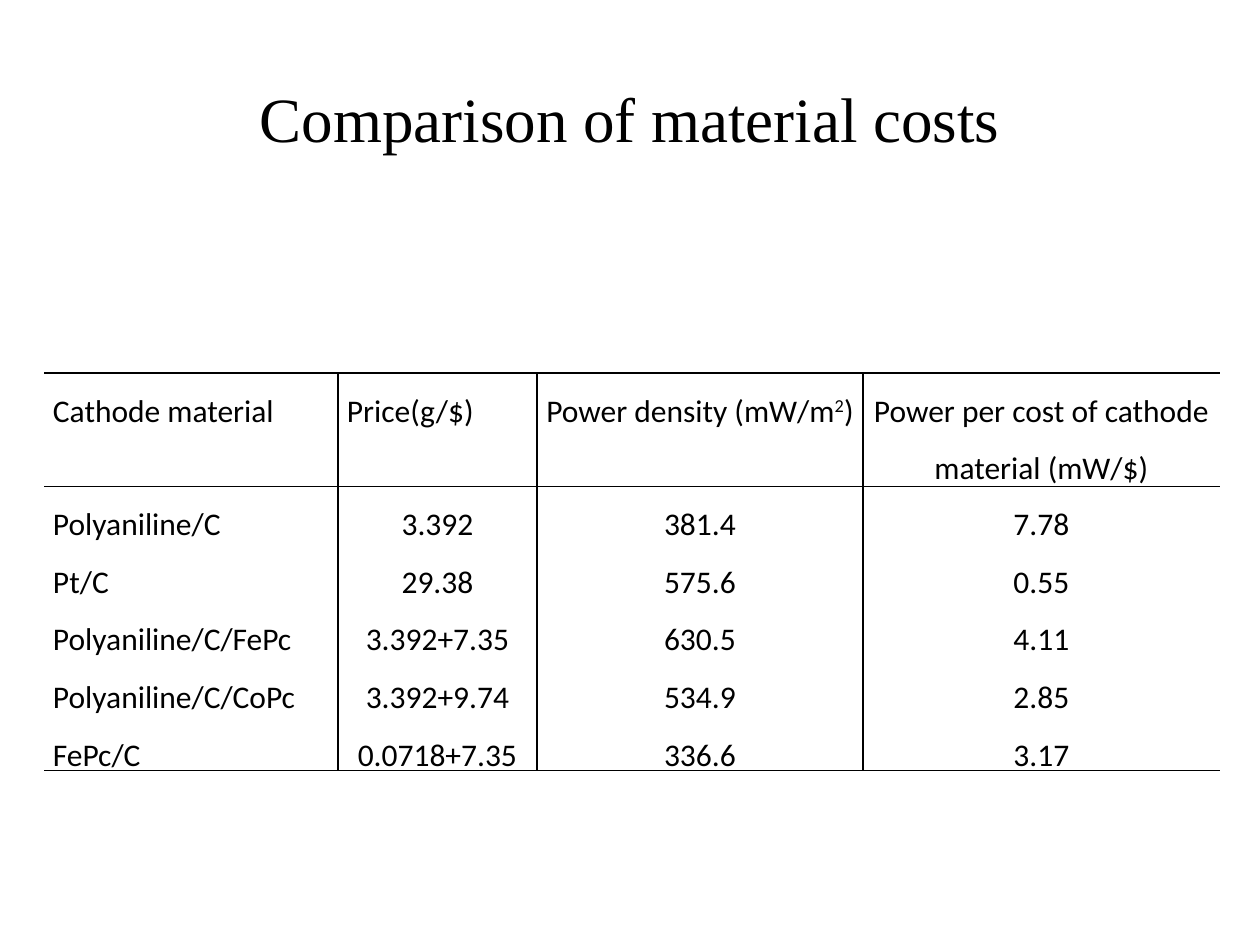
import pptx
import pptx.dml.color
import pptx.enum.text
import pptx.oxml
import pptx.oxml.ns
import pptx.util

PX = 914400 // 126
COLORS = {"ink": "000000", "page": "FFFFFF"}
ALIGN = pptx.enum.text.PP_ALIGN
COLUMN_WIDTHS = [294, 199, 326, 357]
ROW_HEIGHTS = [113, 284]
HEADERS = [
    "Cathode material",
    "Price(g/$)",
    "Power density (mW/m^2^)",
    "Power per cost of cathode material (mW/$)",
]
MATERIALS = [
    ("Polyaniline/C", "3.392", "381.4", "7.78"),
    ("Pt/C", "29.38", "575.6", "0.55"),
    ("Polyaniline/C/FePc", "3.392+7.35", "630.5", "4.11"),
    ("Polyaniline/C/CoPc", "3.392+9.74", "534.9", "2.85"),
    ("FePc/C", "0.0718+7.35", "336.6", "3.17"),
]


def px(n):
    """Turn pixels into EMU."""
    return pptx.util.Emu(n * PX)


def rgb(name):
    """Look up a named colour."""
    return pptx.dml.color.RGBColor.from_string(COLORS[name])


def write(p, text, font, size, align):
    """Fill a paragraph, raising the parts between carets."""
    for i, part in enumerate(text.split("^")):
        r = p.add_run()
        r.text = part
        if i % 2:
            r._r.get_or_add_rPr().set("baseline", "30000")
    p.alignment = align
    p.font.name = font
    p.font.size = pptx.util.Pt(size)
    p.font.color.rgb = rgb("ink")


def add_title(slide, text):
    """Add the centred slide title."""
    sp = slide.shapes.add_textbox(px(63), px(38), px(1134), px(158))
    tf = sp.text_frame
    tf.word_wrap = True
    tf.vertical_anchor = pptx.enum.text.MSO_ANCHOR.MIDDLE
    write(tf.paragraphs[0], text, "Times New Roman", 36, ALIGN.CENTER)


def set_borders(cell, sides):
    """Draw thin lines on the given sides and none on the others."""
    tc_pr = cell._tc.get_or_add_tcPr()
    ns = pptx.oxml.ns.nsdecls("a")
    solid = f'<a:solidFill><a:srgbClr val="{COLORS["ink"]}"/></a:solidFill>'
    for side in "LRTB":
        fill = solid if side in sides else "<a:noFill/>"
        tc_pr.append(pptx.oxml.parse_xml(f'<a:ln{side} {ns} w="12700">{fill}</a:ln{side}>'))


def fill_cell(cell, lines, align, sides):
    """Write one paragraph per line and style the cell."""
    cell.margin_left = cell.margin_right = px(9)
    cell.margin_top = cell.margin_bottom = 0
    set_borders(cell, sides)
    cell.fill.background()
    tf = cell.text_frame
    for i, line in enumerate(lines):
        p = tf.add_paragraph() if i else tf.paragraphs[0]
        write(p, line, "Calibri", 18, align)
        p.line_spacing = 1.5


def add_cost_table(slide):
    """Add the headers and one body row that stacks the materials."""
    frame = slide.shapes.add_table(
        2, len(HEADERS), px(44), px(373), px(sum(COLUMN_WIDTHS)), px(sum(ROW_HEIGHTS))
    )
    table = frame.table
    table.first_row = table.horz_banding = False
    for row, height in zip(table.rows, ROW_HEIGHTS):
        row.height = px(height)
    last = len(HEADERS) - 1
    for c, (header, values) in enumerate(zip(HEADERS, zip(*MATERIALS))):
        table.columns[c].width = px(COLUMN_WIDTHS[c])
        sides = "TB" + ("L" if c > 0 else "") + ("R" if c < last else "")
        fill_cell(table.cell(0, c), [header], ALIGN.CENTER if c > 1 else ALIGN.LEFT, sides)
        fill_cell(table.cell(1, c), values, ALIGN.CENTER if c > 0 else ALIGN.LEFT, sides)


def main():
    """Build and save the slide."""
    prs = pptx.Presentation()
    prs.slide_width, prs.slide_height = px(1260), px(945)
    slide = prs.slides.add_slide(prs.slide_layouts[6])
    slide.background.fill.solid()
    slide.background.fill.fore_color.rgb = rgb("page")
    add_title(slide, "Comparison of material costs")
    add_cost_table(slide)
    prs.save("out.pptx")


if __name__ == "__main__":
    main()
